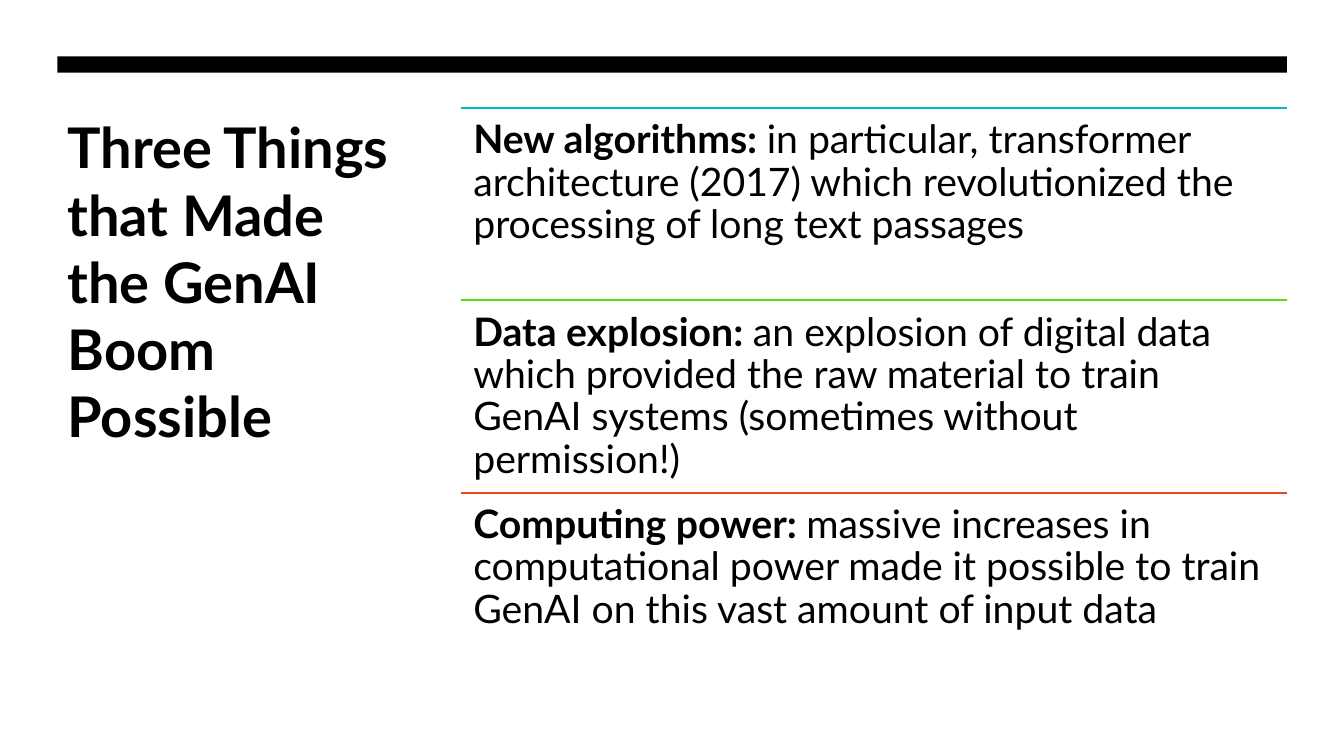
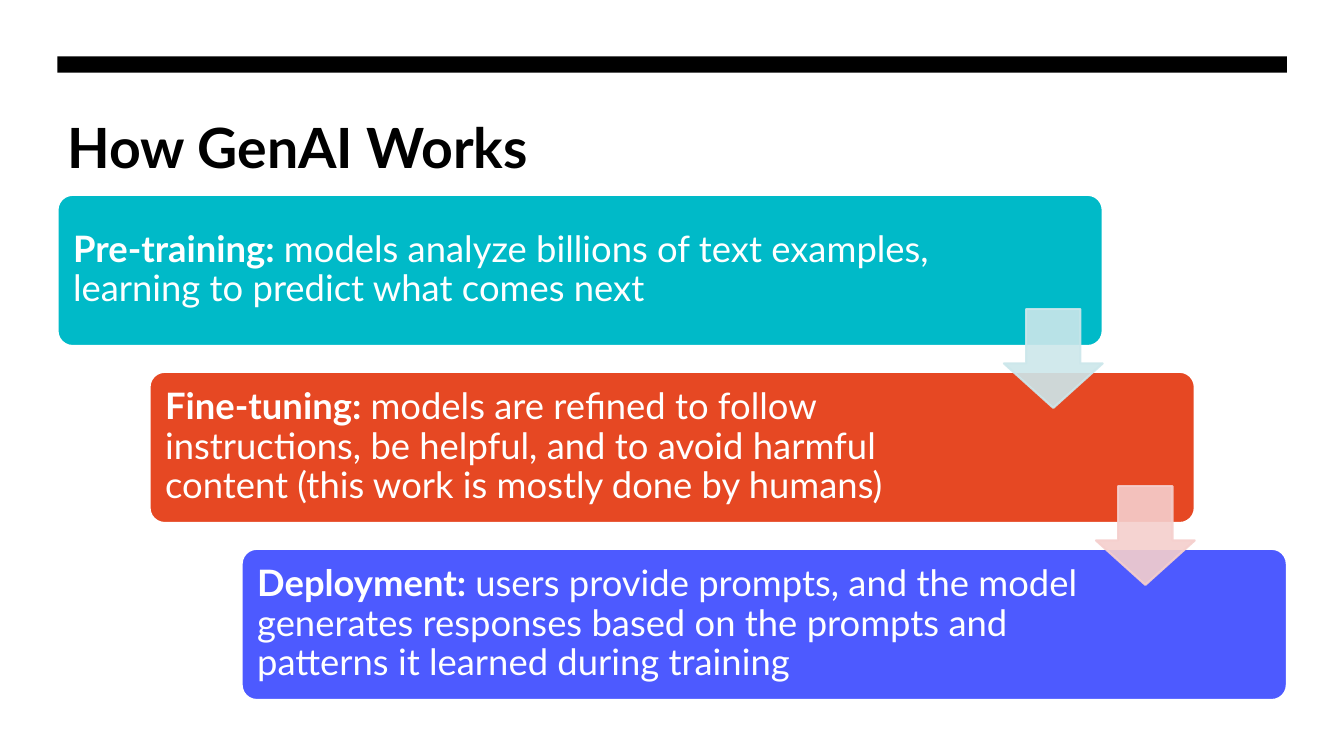
from lxml import etree
from pptx import Presentation
from pptx.dml.color import RGBColor
from pptx.enum import shapes, text
from pptx.oxml import ns
from pptx.util import Cm, Pt

# Content
CAUSES = [
    ("New algorithms: ", "in particular, transformer architecture (2017) which "
     "revolutionized the processing of long text passages", "teal"),
    ("Data explosion: ", "an explosion of digital data which provided the raw "
     "material to train GenAI systems (sometimes without permission!)", "green"),
    ("Computing power: ", "massive increases in computational power made it "
     "possible to train GenAI on this vast amount of input data", "red"),
]
# lead, body, fill, right margin, arrow colour
STEPS = [
    ("Pre-training: ", "models analyze billions of text examples, learning to "
     "predict what comes next", "teal", 4.19, "mist"),
    ("Fine-tuning: ", "models are refined to follow instructions, be helpful, and "
     "to avoid harmful content (this work is mostly done by humans)",
     "red", 5.08, "blush"),
    ("Deployment: ", "users provide prompts, and the model generates responses "
     "based on the prompts and patterns it learned during training",
     "blue", 5.08, None),
]

# Shared style
FONT = "Lato"
HUES = {"black": "000000", "white": "FFFFFF", "teal": "00BAC8", "green": "59DD0C",
        "red": "E64823", "blue": "4D5AFF", "mist": "CCE7EB", "blush": "F5CFCD"}
LEFT, TOP, WIDE = 1.45, 2.72, 30.98
KIND = shapes.MSO_SHAPE


def hue(name):
    return RGBColor.from_string(HUES[name])


def put(frame, runs, size, color="black", space=1.0, pad=None,
        anchor=text.MSO_ANCHOR.TOP):
    """Write (text, bold) runs as one left-aligned paragraph."""
    frame.word_wrap = True
    frame.auto_size = text.MSO_AUTO_SIZE.NONE
    frame.vertical_anchor = anchor
    if pad:
        (frame.margin_left, frame.margin_top,
         frame.margin_right, frame.margin_bottom) = [Cm(p) for p in pad]
    para = frame.paragraphs[0]
    para.alignment = text.PP_ALIGN.LEFT
    para.line_spacing = space
    for words, bold in runs:
        run = para.add_run()
        run.text = words
        run.font.name, run.font.size, run.font.bold = FONT, Pt(size), bold
        run.font.color.rgb = hue(color)


def block(slide, kind, box, fill, line=None, adjust=()):
    shape = slide.shapes.add_shape(kind, *[Cm(n) for n in box])
    shape.shadow.inherit = False
    shape.fill.solid()
    shape.fill.fore_color.rgb = hue(fill)
    if line:
        shape.line.color.rgb = hue(line)
        shape.line.width = Pt(1.5)
    else:
        shape.line.fill.background()
    for i, value in enumerate(adjust):
        shape.adjustments[i] = value
    return shape


def fade(shape, share):
    for color in shape.element.spPr.iter(ns.qn("a:srgbClr")):
        etree.SubElement(color, ns.qn("a:alpha"), val=str(share * 1000))


def rule(slide, left, top, width, color):
    line = slide.shapes.add_connector(shapes.MSO_CONNECTOR.STRAIGHT, Cm(left),
                                      Cm(top), Cm(left + width), Cm(top))
    line.line.color.rgb = hue(color)
    line.line.width = Pt(1.5)
    etree.SubElement(line.element.spPr, ns.qn("a:effectLst"))


def page(deck, title, width, height, size):
    slide = deck.slides.add_slide(deck.slide_layouts[5])
    head = slide.shapes.title
    head.left, head.top = Cm(LEFT), Cm(TOP)
    head.width, head.height = Cm(width), Cm(height)
    put(head.text_frame, [(title, True)], size)
    return slide


def causes(deck):
    slide = page(deck, "Three Things that Made the GenAI Boom Possible",
                 8.76, 11.3, 40)
    # Band moves to the layout, so every slide shows it
    band = block(slide, KIND.RECTANGLE, (LEFT, 1.42, WIDE, 0.41), "black")
    deck.slide_layouts[5].shapes.element.append(band.element)
    # Ruled rows
    left, width, height = 11.63, 20.8, 4.85
    for i, (lead, body, color) in enumerate(CAUSES):
        top = TOP + i * height
        rule(slide, left, top, width, color)
        box = slide.shapes.add_textbox(Cm(left), Cm(top), Cm(width), Cm(height))
        put(box.text_frame, [(lead, True), (body, False)], 28,
            space=0.9, pad=[0.3] * 4)


def steps(deck):
    slide = page(deck, "How GenAI Works", WIDE, 1.96, 39.6)
    spots = [(LEFT + i * 2.32, 4.91 + i * 4.46) for i in range(len(STEPS))]
    # Staircase of boxes
    for (left, top), (lead, body, fill, right, _) in zip(spots, STEPS):
        box = block(slide, KIND.ROUNDED_RECTANGLE, (left, top, 26.34, 3.81),
                    fill, "white", [0.1])
        put(box.text_frame, [(lead, True), (body, False)], 26, "white", 0.9,
            (0.28, 0.28, right, 0.28), text.MSO_ANCHOR.MIDDLE)
    # Arrows lie over the boxes
    for (left, top), (*_, tint) in zip(spots, STEPS):
        if tint:
            arrow = block(slide, KIND.DOWN_ARROW,
                          (left + 23.85, top + 2.88, 2.49, 2.49),
                          tint, tint, [0.55, 0.45])
            fade(arrow, 90)


def main():
    deck = Presentation()
    deck.slide_width, deck.slide_height = Cm(33.87), Cm(19.05)
    causes(deck)
    steps(deck)
    deck.save("out.pptx")


if __name__ == "__main__":
    main()
